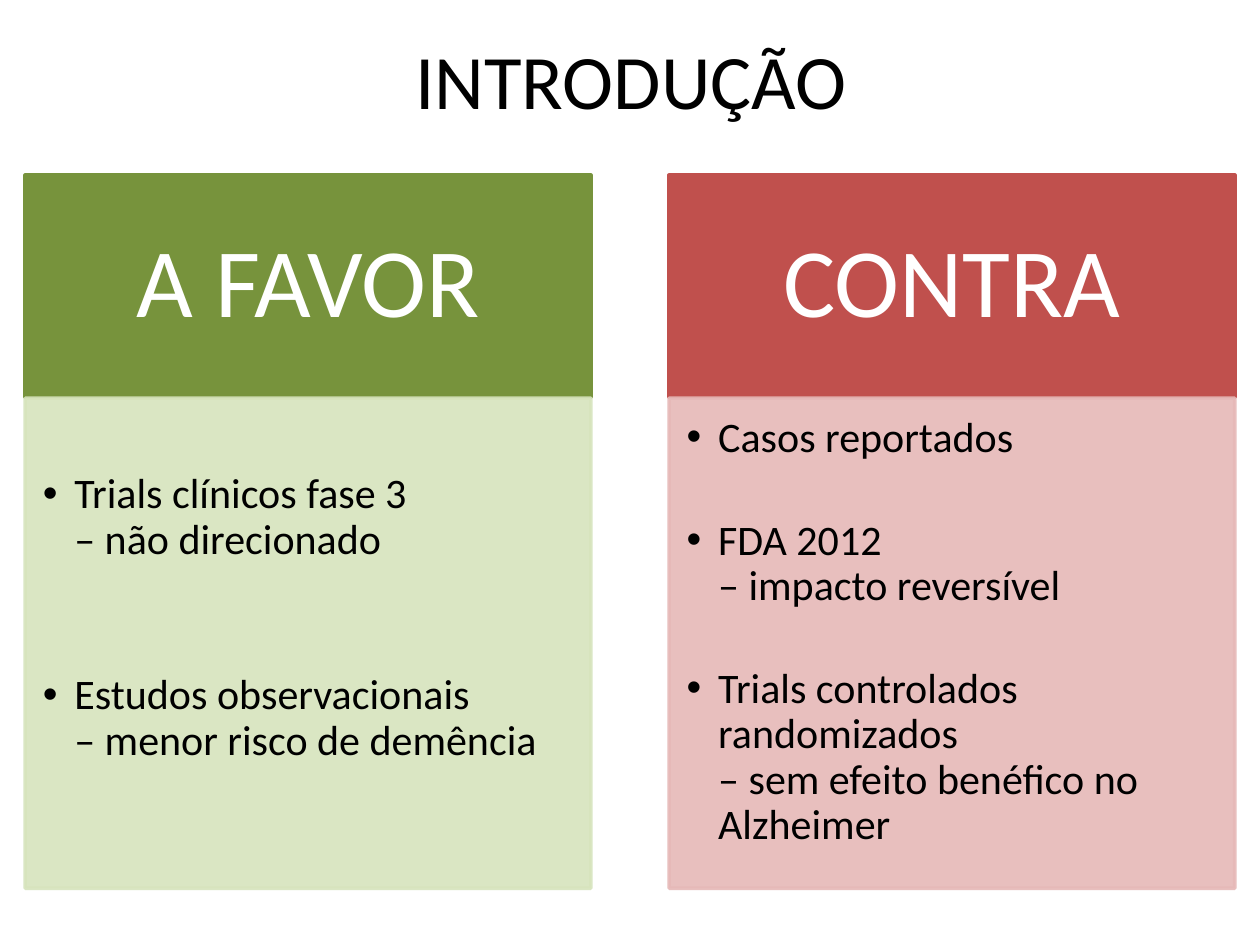
"""Build the introduction slide that sets arguments for and against side by side."""
from dataclasses import dataclass

from lxml.etree import SubElement
from pptx import Presentation
from pptx.dml.color import RGBColor
from pptx.enum.text import MSO_ANCHOR, MSO_AUTO_SIZE, PP_ALIGN
from pptx.oxml.ns import qn
from pptx.shapes.placeholder import SlidePlaceholder
from pptx.slide import Slide
from pptx.util import Inches, Pt

BLACK = RGBColor(0x00, 0x00, 0x00)
WHITE = RGBColor(0xFF, 0xFF, 0xFF)
GREEN = RGBColor(0x77, 0x93, 0x3C)
PALE_GREEN = RGBColor(0xD7, 0xE4, 0xBD)
RED = RGBColor(0xC0, 0x50, 0x4D)
PALE_RED = RGBColor(0xE6, 0xB9, 0xB8)

FONT = "Calibri"
COMPARISON_LAYOUT = 4
COLUMN_WIDTH = 4.49
HEADING_TOP, HEADING_HEIGHT = 1.39, 1.76
ARGUMENTS_TOP, ARGUMENTS_HEIGHT = 3.16, 3.89


@dataclass(frozen=True)
class Side:
    heading: str
    arguments: tuple[str, ...]
    left: float
    dark: RGBColor
    pale: RGBColor
    top_inset: float
    gap: int
    heading_idx: int


SIDES = (
    Side(
        "A FAVOR",
        (
            "Trials clínicos fase 3\v– não direcionado",
            "Estudos observacionais\v– menor risco de demência",
        ),
        0.2, GREEN, PALE_GREEN, 0.59, 63, 1,
    ),
    Side(
        "CONTRA",
        (
            "Casos reportados",
            "FDA 2012\v– impacto reversível",
            "Trials controlados randomizados\v– sem efeito benéfico no Alzheimer",
        ),
        5.31, RED, PALE_RED, 0.14, 33, 3,
    ),
)


def place(holder: SlidePlaceholder, left: float, top: float, width: float, height: float) -> None:
    """Move and size a placeholder, in inches."""
    holder.left, holder.top = Inches(left), Inches(top)
    holder.width, holder.height = Inches(width), Inches(height)


def paint(holder: SlidePlaceholder, color: RGBColor, opacity: int = 100) -> None:
    """Give a placeholder the same fill and outline, at a percentage of opacity."""
    holder.fill.solid()
    holder.fill.fore_color.rgb = color
    holder.line.color.rgb = color
    holder.line.width = Pt(2)
    if opacity < 100:
        for tint in holder.element.spPr.iter(qn("a:srgbClr")):
            SubElement(tint, qn("a:alpha"), val=str(opacity * 1000))


def write(holder: SlidePlaceholder, text: str, size: int, color: RGBColor, anchor: MSO_ANCHOR) -> None:
    """Fill a placeholder with text in one style."""
    frame = holder.text_frame
    frame.text = text
    frame.word_wrap = True
    frame.auto_size = MSO_AUTO_SIZE.NONE
    frame.vertical_anchor = anchor
    for paragraph in frame.paragraphs:
        for run in paragraph.runs:
            run.font.name = FONT
            run.font.size = Pt(size)
            run.font.bold = False
            run.font.color.rgb = color


def inset(holder: SlidePlaceholder, left: float, top: float, right: float, bottom: float) -> None:
    """Set the inner margins of a placeholder, in inches."""
    frame = holder.text_frame
    frame.margin_left, frame.margin_top = Inches(left), Inches(top)
    frame.margin_right, frame.margin_bottom = Inches(right), Inches(bottom)


def draw_side(slide: Slide, side: Side) -> None:
    """Draw the heading and the argument list of one side."""
    holders = {holder.placeholder_format.idx: holder for holder in slide.placeholders}

    heading = holders[side.heading_idx]
    place(heading, side.left, HEADING_TOP, COLUMN_WIDTH, HEADING_HEIGHT)
    paint(heading, side.dark)
    write(heading, side.heading, 56, WHITE, MSO_ANCHOR.MIDDLE)
    inset(heading, 0.44, 0.25, 0.44, 0.25)
    caption = heading.text_frame.paragraphs[0]
    caption.alignment = PP_ALIGN.CENTER
    caption.line_spacing = 0.9
    caption.space_before = Pt(0)

    arguments = holders[side.heading_idx + 1]
    place(arguments, side.left, ARGUMENTS_TOP, COLUMN_WIDTH, ARGUMENTS_HEIGHT)
    paint(arguments, side.pale, 90)
    write(arguments, "\n".join(side.arguments), 24, BLACK, MSO_ANCHOR.TOP)
    inset(arguments, 0.14, side.top_inset, 0.19, 0.21)
    for argument in arguments.text_frame.paragraphs:
        argument.line_spacing = 0.9
        argument.space_before = Pt(0)
        argument.space_after = Pt(side.gap)
        properties = argument._p.get_or_add_pPr()
        properties.set("marL", str(Inches(0.25)))
        properties.set("indent", str(Inches(-0.25)))


def main() -> None:
    """Build and save the slide."""
    presentation = Presentation()
    presentation.slide_width, presentation.slide_height = Inches(10), Inches(7.5)
    slide = presentation.slides.add_slide(presentation.slide_layouts[COMPARISON_LAYOUT])

    title = slide.shapes.title
    place(title, 0.51, 0, 9, 1.25)
    write(title, "INTRODUÇÃO", 44, BLACK, MSO_ANCHOR.MIDDLE)
    title.text_frame.paragraphs[0].alignment = PP_ALIGN.CENTER

    for side in SIDES:
        draw_side(slide, side)
    presentation.save("out.pptx")


if __name__ == "__main__":
    main()
